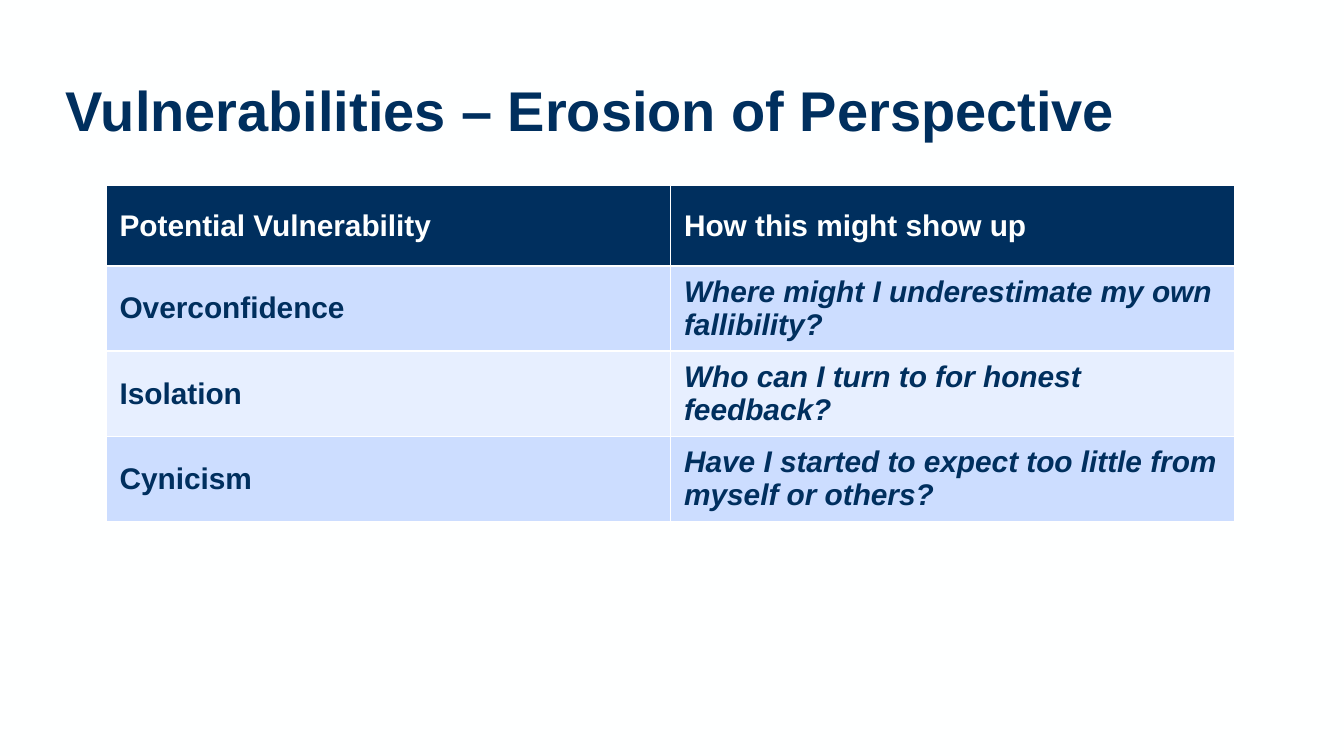
"""Build the slide on vulnerabilities that erode perspective."""
from pptx import Presentation
from pptx.dml.color import RGBColor
from pptx.enum.text import MSO_ANCHOR
from pptx.util import Inches, Pt

NAVY = RGBColor(0x00, 0x2F, 0x5E)
WHITE = RGBColor(0xFE, 0xFF, 0xFF)
BLUE = RGBColor(0xCC, 0xDD, 0xFF)
PALE_BLUE = RGBColor(0xE7, 0xEF, 0xFF)

ROWS = [
    ("Potential Vulnerability", "How this might show up"),
    ("Overconfidence", "Where might I underestimate my own fallibility?"),
    ("Isolation", "Who can I turn to for honest feedback?"),
    ("Cynicism", "Have I started to expect too little from myself or others?"),
]


def add_run(paragraph, text, size, color, italic=False):
    run = paragraph.add_run()
    run.text = text
    run.font.name = "Arial"
    run.font.size = Pt(size)
    run.font.bold = True
    run.font.italic = italic
    run.font.color.rgb = color


presentation = Presentation()
presentation.slide_width = Inches(10)
presentation.slide_height = Inches(10 * 9 / 16)
slide = presentation.slides.add_slide(presentation.slide_layouts[6])
slide.background.fill.solid()
slide.background.fill.fore_color.rgb = WHITE

title = slide.shapes.add_textbox(Inches(0.39), Inches(0.3), Inches(9.31), Inches(1.09))
title.text_frame.word_wrap = True
title.text_frame.vertical_anchor = MSO_ANCHOR.MIDDLE
title_paragraph = title.text_frame.paragraphs[0]
title_paragraph.line_spacing = Pt(31)
add_run(title_paragraph, "Vulnerabilities – Erosion of Perspective", 30, NAVY)

table = slide.shapes.add_table(
    len(ROWS), 2, Inches(0.79), Inches(1.38), Inches(8.4), Inches(2.4)
).table

for row_index, texts in enumerate(ROWS):
    is_header = row_index == 0
    for column_index, text in enumerate(texts):
        cell = table.cell(row_index, column_index)
        cell.vertical_anchor = MSO_ANCHOR.MIDDLE
        cell.fill.solid()
        if is_header:
            cell.fill.fore_color.rgb = NAVY
        else:
            cell.fill.fore_color.rgb = BLUE if row_index % 2 else PALE_BLUE
        add_run(
            cell.text_frame.paragraphs[0],
            text,
            16,
            WHITE if is_header else NAVY,
            italic=not is_header and column_index == 1,
        )

presentation.save("out.pptx")
